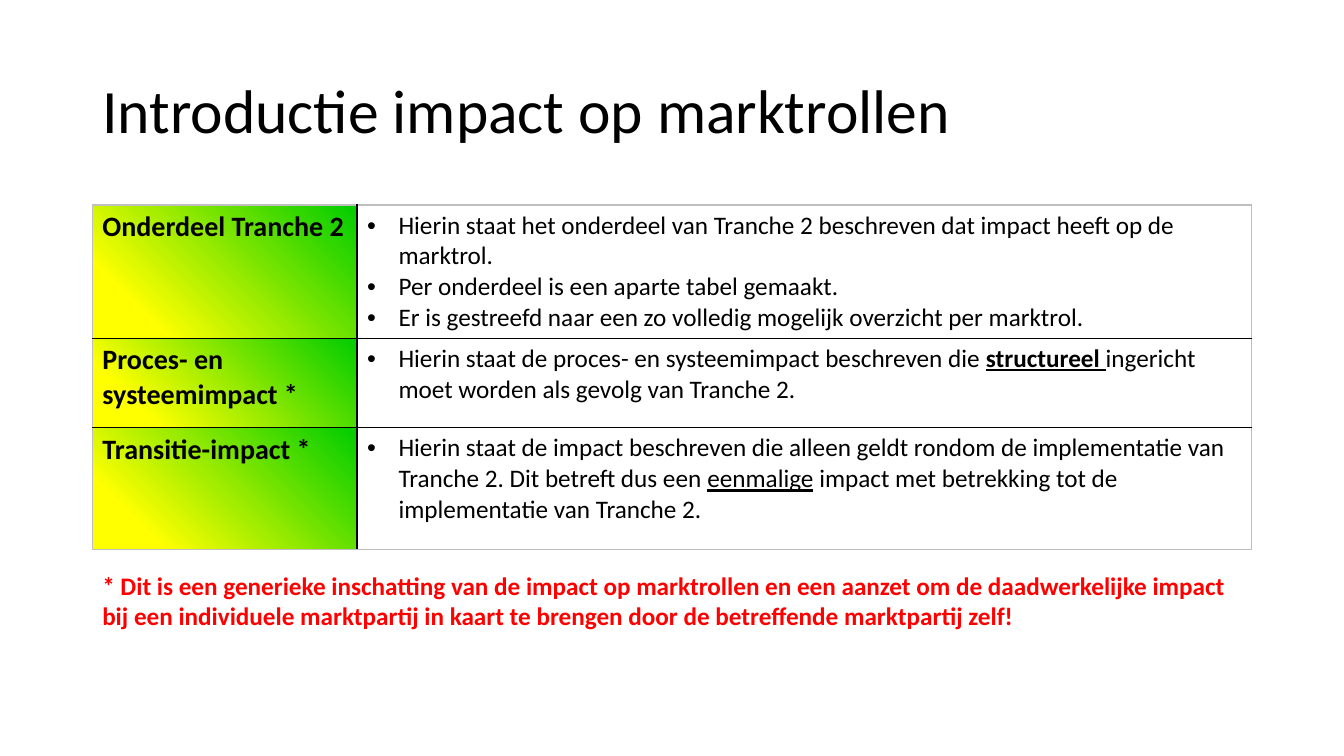
from lxml import etree
from pptx import Presentation
from pptx.dml.color import RGBColor
from pptx.enum import text
from pptx.oxml import ns
from pptx.util import Pt

COLORS = {"ink": "000000", "edge": "BFBFBF", "green": "00CC00",
          "yellow": "FFFF00", "note": "FF0000"}
FONT = "Calibri"
TITLE = "Introductie impact op marktrollen"
NOTE = ("* Dit is een generieke inschatting van de impact op marktrollen en een aanzet "
        "om de daadwerkelijke impact bij een individuele marktpartij in kaart te brengen "
        "door de betreffende marktpartij zelf!")
ROWS = [
    ("Onderdeel Tranche 2", 95, [
        [("Hierin staat het onderdeel van Tranche 2 beschreven dat impact heeft op de marktrol.", "")],
        [("Per onderdeel is een aparte tabel gemaakt.", "")],
        [("Er is gestreefd naar een zo volledig mogelijk overzicht per marktrol.", "")],
    ]),
    ("Proces- en systeemimpact *", 64, [
        [("Hierin staat de proces- en systeemimpact beschreven die ", ""),
         ("structureel ", "bu"),
         ("ingericht moet worden als gevolg van Tranche 2.", "")],
    ]),
    ("Transitie-impact *", 87, [
        [("Hierin staat de impact beschreven die alleen geldt rondom de implementatie van "
          "Tranche 2. Dit betreft dus een ", ""),
         ("eenmalige", "u"),
         (" impact met betrekking tot de implementatie van Tranche 2.", "")],
    ]),
]


def color(name):
    return RGBColor.from_string(COLORS[name])


def style(para, size, tint="ink", bold=None):
    font = para.font
    font.name, font.size, font.bold = FONT, Pt(size), bold
    font.color.rgb = color(tint)


def place(shape, box):
    shape.left, shape.top, shape.width, shape.height = map(Pt, box)


def add_title(slide, box):
    title = slide.shapes.title
    place(title, box)
    frame = title.text_frame
    frame.text = TITLE
    frame.auto_size = text.MSO_AUTO_SIZE.NONE
    frame.vertical_anchor = text.MSO_ANCHOR.MIDDLE
    para = frame.paragraphs[0]
    para.alignment = text.PP_ALIGN.LEFT
    para.line_spacing = 0.9
    style(para, 44)


def add_edges(cell, outer):
    props = cell._tc.get_or_add_tcPr()
    for side in "LRTB":
        line = etree.SubElement(props, ns.qn("a:ln" + side), w=str(Pt(1)))
        fill = etree.SubElement(line, ns.qn("a:solidFill"))
        name = "edge" if side in outer else "ink"
        etree.SubElement(fill, ns.qn("a:srgbClr"), val=COLORS[name])


def fill_label(cell, label):
    cell.fill.gradient()
    cell.fill.gradient_angle = 225
    stops = cell.fill.gradient_stops
    for stop, name, place_at in zip(stops, ("green", "yellow"), (0, 0.81)):
        stop.color.rgb = color(name)
        stop.position = place_at
    cell.text = label
    style(cell.text_frame.paragraphs[0], 20, bold=True)


def add_bullet(para):
    props = para._p.get_or_add_pPr()
    props.set("marL", str(Pt(22.5)))
    props.set("indent", str(Pt(-22.5)))
    etree.SubElement(props, ns.qn("a:buFont"), typeface="Arial")
    etree.SubElement(props, ns.qn("a:buChar"), char="•")


def fill_list(cell, items):
    cell.fill.background()
    frame = cell.text_frame
    for i, parts in enumerate(items):
        para = frame.add_paragraph() if i else frame.paragraphs[0]
        add_bullet(para)
        style(para, 18)
        for words, marks in parts:
            run = para.add_run()
            run.text = words
            run.font.bold = "b" in marks
            run.font.underline = "u" in marks


def add_grid(slide, box):
    table = slide.shapes.add_table(len(ROWS), 2, *map(Pt, box)).table
    table.first_row = table.horz_banding = False
    label_w = 189
    table.columns[0].width = Pt(label_w)
    table.columns[1].width = Pt(box[2] - label_w)
    for i, (label, height, items) in enumerate(ROWS):
        table.rows[i].height = Pt(height)
        ends = ("T" if i == 0 else "") + ("B" if i == len(ROWS) - 1 else "")
        left, right = table.cell(i, 0), table.cell(i, 1)
        add_edges(left, "L" + ends)
        add_edges(right, "R" + ends)
        fill_label(left, label)
        fill_list(right, items)


def add_note(slide, box):
    frame = slide.shapes.add_textbox(*map(Pt, box)).text_frame
    frame.word_wrap = True
    frame.auto_size = text.MSO_AUTO_SIZE.SHAPE_TO_FIT_TEXT
    frame.text = NOTE
    style(frame.paragraphs[0], 18, "note", True)


def main():
    deck = Presentation()
    deck.slide_width, deck.slide_height = Pt(960), Pt(540)
    slide = deck.slides.add_slide(deck.slide_layouts[5])
    left, width = 66, 828
    add_title(slide, (left, 28.8, width, 104.4))
    add_grid(slide, (left, 146.5, width, sum(row[1] for row in ROWS)))
    add_note(slide, (left, 404, width, 51))
    deck.save("out.pptx")


if __name__ == "__main__":
    main()
